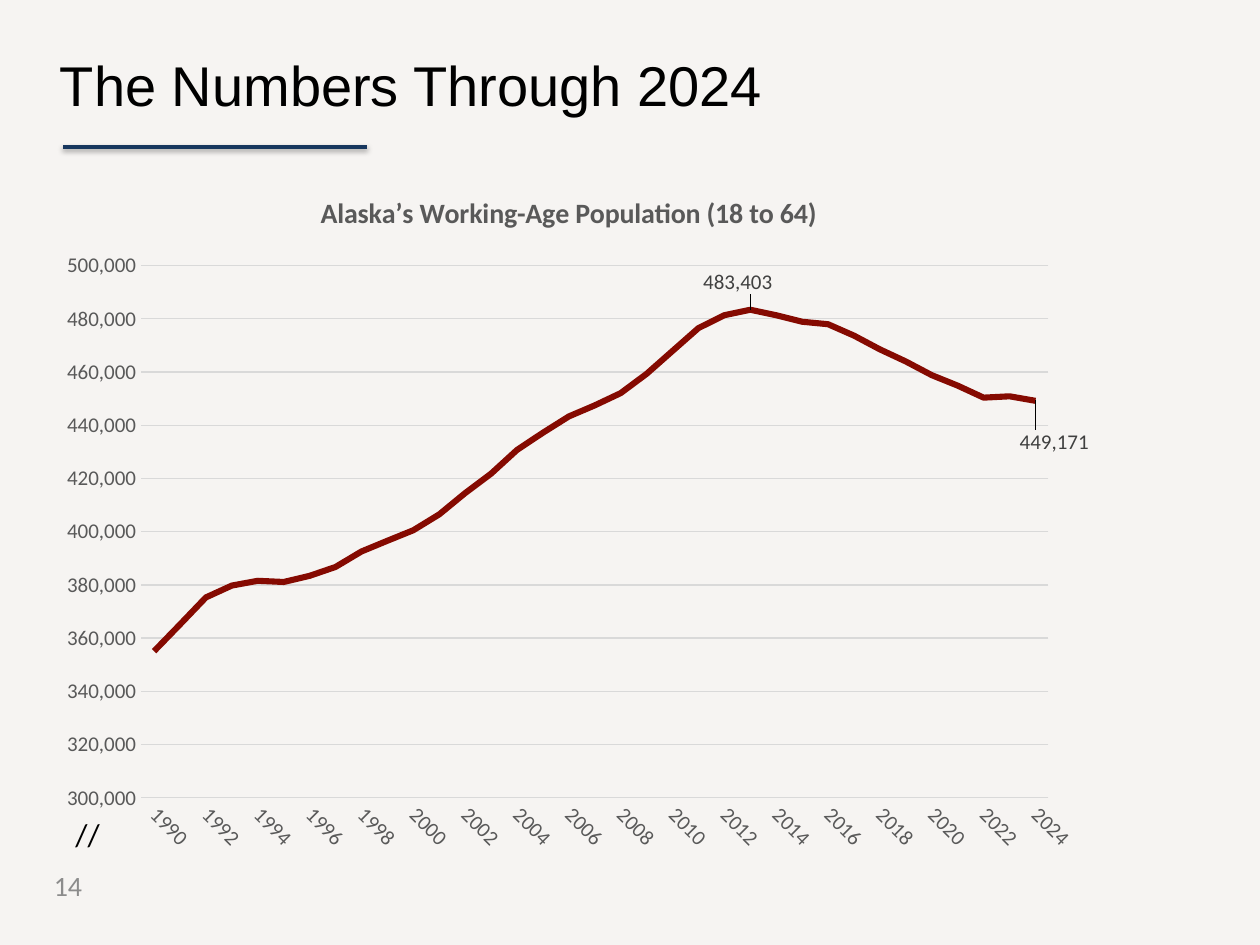
from lxml import etree
from pptx import Presentation
from pptx import util as u
from pptx.chart import data as chart_data
from pptx.dml.color import RGBColor
from pptx.enum import chart as charts, shapes, text
from pptx.oxml import parse_xml
from pptx.oxml import ns

Pt = u.Pt
COLORS = {"paper": "F6F4F2", "ink": "000000", "navy": "17375E", "red": "850A01",
          "gray": "595959", "label": "404040", "grid": "D9D9D9", "number": "8C8C8C"}
FIRST_YEAR = 1990
POPULATION = [
    355078, 365095, 375280, 379745, 381521, 381086, 383383, 386720, 392536, 396572,
    400515, 406512, 414496, 421813, 430724, 437195, 443302, 447464, 452066, 459324,
    467915, 476507, 481344, 483403, 481335, 478887, 477953, 473674, 468502, 463952,
    458818, 454872, 450377, 450878, 449171]
# Year: label shift as a share of the chart's width and height
LABEL_SHIFTS = {2013: (-0.05, -0.04), 2024: (-0.02, 0.06)}


def color(name):
    return RGBColor.from_string(COLORS[name])


def style_font(font, size, tone, name="Calibri", bold=False):
    font.name, font.size, font.bold = name, Pt(size), bold
    font.color.rgb = color(tone)


def style_line(line, tone, width):
    line.color.rgb = color(tone)
    line.width = Pt(width)


def write(frame, words, size, tone, name="Calibri", align=text.PP_ALIGN.LEFT,
          anchor=text.MSO_ANCHOR.TOP):
    frame.word_wrap = True
    frame.auto_size = text.MSO_AUTO_SIZE.NONE
    frame.vertical_anchor = anchor
    para = frame.paragraphs[0]
    para.alignment = align
    span = para.add_run()
    span.text = words
    style_font(span.font, size, tone, name)


def add_text(page, box, words, **style):
    shape = page.shapes.add_textbox(*map(Pt, box))
    write(shape.text_frame, words, **style)


def add_heading(page, box):
    left, top, width, height = box
    title = page.shapes.title
    title.left, title.top, title.width, title.height = map(Pt, box)
    write(title.text_frame, "The Numbers Through 2024", size=32, tone="ink", name="Arial")

    # Shadowed rule under the title
    x, y = left + 9, top + height + 13
    rule = page.shapes.add_connector(
        shapes.MSO_CONNECTOR.STRAIGHT, Pt(x), Pt(y), Pt(x + 174), Pt(y))
    style_line(rule.line, "navy", 2)
    rule._element.spPr.append(parse_xml(
        f'<a:effectLst {ns.nsdecls("a")}>'
        f'<a:outerShdw blurRad="{Pt(3.1)}" dist="{Pt(1.6)}" dir="5400000" rotWithShape="0">'
        f'<a:srgbClr val="{COLORS["ink"]}"><a:alpha val="38000"/></a:srgbClr>'
        '</a:outerShdw></a:effectLst>'))


def manual_layout(x, y, size=None):
    parts = [("x", x), ("y", y)]
    if size:
        parts = ([("layoutTarget", "inner"), ("xMode", "edge"), ("yMode", "edge")]
                 + parts + [("w", size[0]), ("h", size[1])])
    tags = "".join(f'<c:{tag} val="{value}"/>' for tag, value in parts)
    return parse_xml(f'<c:layout {ns.nsdecls("c")}><c:manualLayout>{tags}'
                     '</c:manualLayout></c:layout>')


def add_point_labels(series):
    series.data_labels.show_value = False
    for year, shift in LABEL_SHIFTS.items():
        index = year - FIRST_YEAR
        label = series.points[index].data_label
        style_font(label.font, 12, "label")
        label.position = charts.XL_LABEL_POSITION.RIGHT
        mark = series._element.xpath(f'.//c:dLbl/c:idx[@val="{index}"]')[0]
        mark.addnext(manual_layout(*shift))

    # Leader lines from the points to their labels
    series.data_labels._element.append(etree.fromstring(
        f'<c:extLst {ns.nsdecls("c", "a")}>'
        '<c:ext uri="{CE6537A1-D6FC-4f65-9D91-7224C49458BB}" '
        'xmlns:c15="http://schemas.microsoft.com/office/drawing/2012/chart">'
        '<c15:showLeaderLines val="1"/><c15:leaderLines><c:spPr><a:ln w="9525"><a:solidFill>'
        f'<a:srgbClr val="{COLORS["ink"]}"/></a:solidFill></a:ln></c:spPr>'
        '</c15:leaderLines></c:ext></c:extLst>'))


def style_axes(chart):
    for axis in (chart.category_axis, chart.value_axis):
        axis.major_tick_mark = axis.minor_tick_mark = charts.XL_TICK_MARK.NONE
        style_font(axis.tick_labels.font, 12, "gray")

    years = chart.category_axis
    style_line(years.format.line, "grid", 0.75)
    years._element.txPr.bodyPr.set("rot", "2700000")
    skip = parse_xml(f'<c:tickLblSkip {ns.nsdecls("c")} val="2"/>')
    years._element.xpath("c:noMultiLvlLbl")[0].addprevious(skip)

    people = chart.value_axis
    people.minimum_scale, people.maximum_scale = 300000, 500000
    people.major_unit = 20000
    people.tick_labels.number_format = "#,##0"
    people.tick_labels.number_format_is_linked = False
    people.format.line.fill.background()
    style_line(people.major_gridlines.format.line, "grid", 0.75)


def add_population_chart(page, box):
    data = chart_data.CategoryChartData(number_format="#,##0")
    data.categories = [str(FIRST_YEAR + i) for i in range(len(POPULATION))]
    data.add_series("Series 1", POPULATION)
    chart = page.shapes.add_chart(
        charts.XL_CHART_TYPE.LINE, *map(Pt, box), data).chart
    style_font(chart.font, 10, "ink")
    chart.has_legend = False

    # Chart title and plot area
    frame = chart.chart_title.text_frame
    frame.text = "Alaska’s Working-Age Population (18 to 64)"
    style_font(frame.paragraphs[0].runs[0].font, 16, "gray", bold=True)
    chart.chart_title.include_in_layout = False
    area = chart._chartSpace.chart.plotArea
    for old in area.xpath("c:layout"):
        area.remove(old)
    area.insert(0, manual_layout(0.09, 0.14, (0.87, 0.77)))
    style_axes(chart)

    # Population line
    plot = chart.plots[0]
    plot.vary_by_categories = False
    series = plot.series[0]
    series.smooth = False
    series.marker.style = charts.XL_MARKER_STYLE.NONE
    style_line(series.format.line, "red", 3.5)
    add_point_labels(series)


def main():
    deck = Presentation()
    deck.slide_width, deck.slide_height = Pt(720), Pt(540)
    page = deck.slides.add_slide(deck.slide_layouts[5])
    page.background.fill.solid()
    page.background.fill.fore_color.rgb = color("paper")

    # Page number
    add_text(page, (-113.76, 491.76, 167.76, 28.8), "14", size=16, tone="number",
             align=text.PP_ALIGN.RIGHT, anchor=text.MSO_ANCHOR.MIDDLE)
    add_heading(page, (27, 25, 660, 46))
    add_population_chart(page, (27, 96.5, 596, 395))
    # Axis break mark
    add_text(page, (36, 462, 47, 29), "//", size=18, tone="ink")
    deck.save("out.pptx")


if __name__ == "__main__":
    main()
